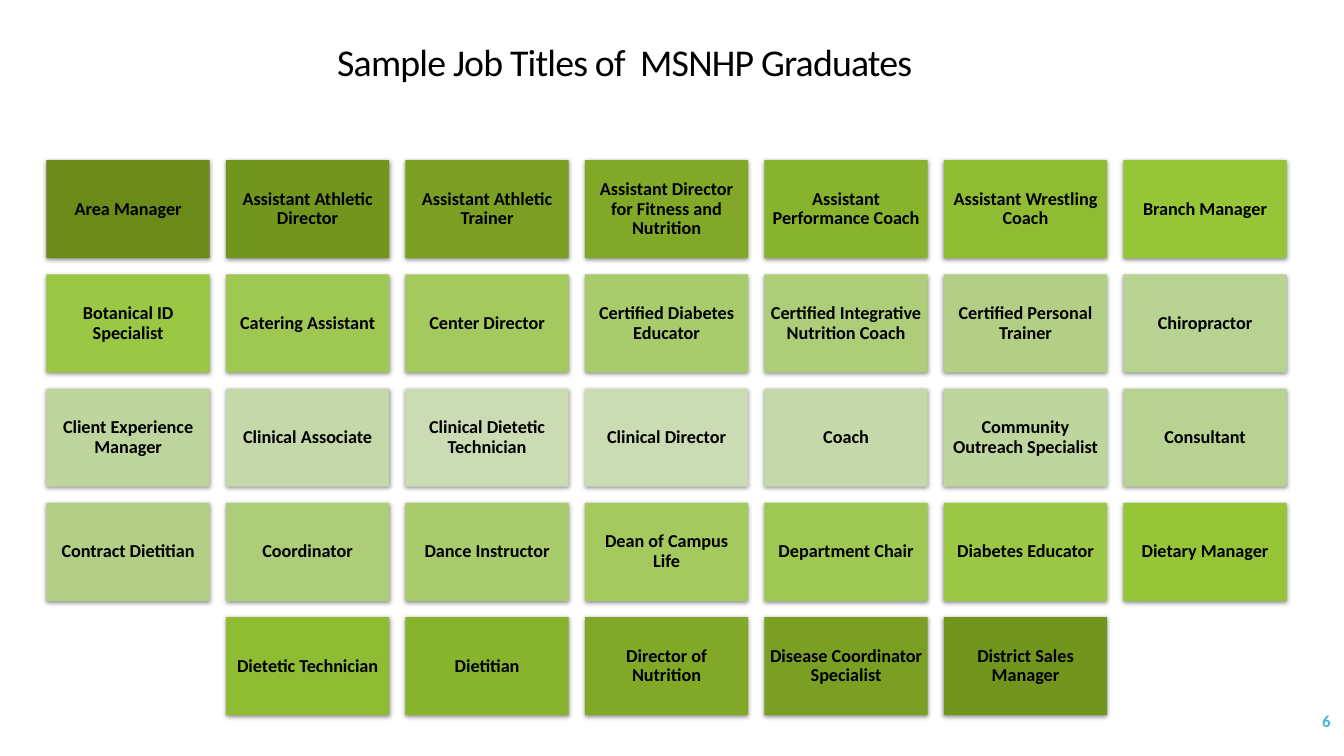
from dataclasses import dataclass

from lxml.etree import SubElement
from pptx import Presentation
from pptx.dml.color import RGBColor
from pptx.enum.shapes import MSO_SHAPE
from pptx.enum.text import MSO_ANCHOR, MSO_AUTO_SIZE, PP_ALIGN
from pptx.oxml.ns import qn
from pptx.util import Pt


@dataclass(frozen=True)
class Theme:
    font: str = "Calibri"
    ink: str = "000000"
    accent: str = "40BAD2"
    title_size: float = 27
    card_size: float = 13
    number_size: float = 12
    greens: tuple = (
        "6B8A1A", "72951E", "7A9F23", "81A927", "88B32C", "8FBC32",
        "96C537", "9AC744", "9FC852", "A3C95F", "A8CB6C", "ADCD79",
        "B3CF85", "B8D291", "BED59D", "C5D8A9", "CBDBB4",
    )


JOBS = [
    "Area Manager", "Assistant Athletic Director",
    "Assistant Athletic Trainer",
    "Assistant Director for Fitness and Nutrition",
    "Assistant Performance Coach", "Assistant Wrestling Coach",
    "Branch Manager",
    "Botanical ID Specialist", "Catering Assistant", "Center Director",
    "Certified Diabetes Educator", "Certified Integrative Nutrition Coach",
    "Certified Personal Trainer", "Chiropractor",
    "Client Experience Manager", "Clinical Associate",
    "Clinical Dietetic Technician", "Clinical Director", "Coach",
    "Community Outreach Specialist", "Consultant",
    "Contract Dietitian", "Coordinator", "Dance Instructor",
    "Dean of Campus Life", "Department Chair", "Diabetes Educator",
    "Dietary Manager",
    "Dietetic Technician", "Dietitian", "Director of Nutrition",
    "Disease Coordinator Specialist", "District Sales Manager",
]
COLUMNS = 7
LEFT, TOP = 33.2, 114.4
CARD_W, CARD_H = 116.6, 70
STEP_X, STEP_Y = 128.2, 81.6


def set_all(target, values):
    for name, value in values.items():
        setattr(target, name, value)


class SlideBuilder:
    def __init__(self, slide, theme):
        self.s = slide
        self.theme = theme

    def put_text(self, shape, text, size, color, bold=False, inset=None,
                 **para):
        """Put one formatted paragraph in a shape and return its run."""
        tf = shape.text_frame
        set_all(tf, {"word_wrap": True, "auto_size": MSO_AUTO_SIZE.NONE,
                     "vertical_anchor": MSO_ANCHOR.MIDDLE})
        if inset is not None:
            for side in ("left", "top", "right", "bottom"):
                setattr(tf, f"margin_{side}", Pt(inset))
        p = tf.paragraphs[0]
        set_all(p, para)
        r = p.add_run()
        r.text = text
        set_all(r.font, {"name": self.theme.font, "size": Pt(size),
                         "bold": bold})
        r.font.color.rgb = RGBColor.from_string(color)
        return r

    def title(self, text, left, top, width, height):
        sp = self.s.shapes.title
        set_all(sp, {"left": Pt(left), "top": Pt(top),
                     "width": Pt(width), "height": Pt(height)})
        r = self.put_text(sp, text, self.theme.title_size, self.theme.ink,
                          alignment=PP_ALIGN.CENTER, line_spacing=0.9)
        r.font._element.set("spc", "-60")

    def card(self, text, fill, left, top):
        sp = self.s.shapes.add_shape(MSO_SHAPE.RECTANGLE, Pt(left), Pt(top),
                                     Pt(CARD_W), Pt(CARD_H))
        sp.fill.solid()
        sp.fill.fore_color.rgb = RGBColor.from_string(fill)
        sp.line.fill.background()
        self.soft_shadow(sp)
        self.put_text(sp, text, self.theme.card_size, self.theme.ink,
                      bold=True, inset=3.6, alignment=PP_ALIGN.CENTER,
                      line_spacing=0.9, space_after=Pt(4.5))

    def soft_shadow(self, sp):
        sp.shadow.inherit = False
        effects = sp._element.spPr.find(qn("a:effectLst"))
        shadow = SubElement(effects, qn("a:outerShdw"), {
            "blurRad": str(Pt(3.5)), "dist": str(Pt(1.1)),
            "dir": "5400000", "algn": "ctr", "rotWithShape": "0"})
        color = SubElement(shadow, qn("a:srgbClr"), val=self.theme.ink)
        SubElement(color, qn("a:alpha"), val="45000")

    def page_number(self, text, left, top, width, height):
        sp = self.s.shapes.add_textbox(Pt(left), Pt(top), Pt(width),
                                       Pt(height))
        self.put_text(sp, text, self.theme.number_size, self.theme.accent,
                      bold=True, alignment=PP_ALIGN.RIGHT, space_after=Pt(6))


def main():
    prs = Presentation()
    set_all(prs, {"slide_width": Pt(960), "slide_height": Pt(540)})
    theme = Theme()
    builder = SlideBuilder(prs.slides.add_slide(prs.slide_layouts[5]), theme)
    builder.page_number("6", 837.4, 500.4, 120.2, 28.8)
    builder.title("Sample Job Titles of  MSNHP Graduates",
                  0, 28.8, 892.1, 33.8)
    for i, job in enumerate(JOBS):
        row, col = divmod(i, COLUMNS)
        in_row = min(COLUMNS, len(JOBS) - row * COLUMNS)
        col += (COLUMNS - in_row) / 2  # a short row is centred
        green = theme.greens[min(i, len(JOBS) - i)]  # lightens, then darkens
        builder.card(job, green, LEFT + col * STEP_X, TOP + row * STEP_Y)
    prs.save("out.pptx")


if __name__ == "__main__":
    main()
